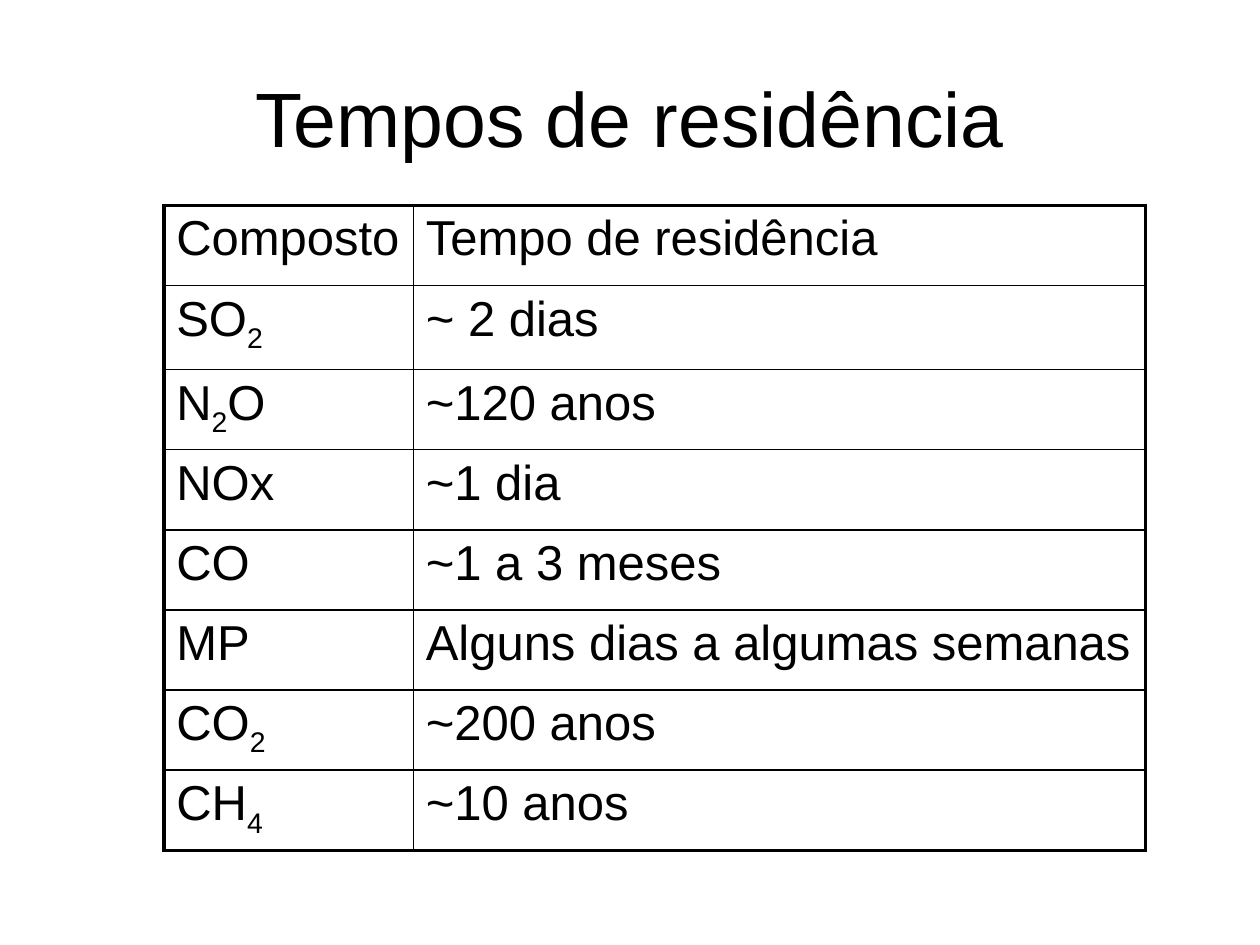
from lxml import etree
from pptx import Presentation
from pptx.dml.color import RGBColor
from pptx.enum.text import MSO_ANCHOR, PP_ALIGN
from pptx.oxml.ns import qn
from pptx.util import Inches, Pt

BLACK = RGBColor(0x00, 0x00, 0x00)
CENTER = PP_ALIGN.CENTER
MIDDLE = MSO_ANCHOR.MIDDLE
BLANK_LAYOUT = 6
THIN, THICK = 1, 2.25

# Text between underscores is set as a subscript.
RESIDENCE_TIMES = [
    ("Composto", "Tempo de residência"),
    ("SO_2", "~ 2 dias"),
    ("N_2_O", "~120 anos"),
    ("NOx", "~1 dia"),
    ("CO", "~1 a 3 meses"),
    ("MP", "Alguns dias a algumas semanas"),
    ("CO_2", "~200 anos"),
    ("CH_4", "~10 anos"),
]
COLUMN_WIDTHS = [1.98, 5.81]
TABLE_HEIGHT = 5.12
ROW_WEIGHTS = [1, 1.05, 1, 1, 1, 1, 1, 1]


class SlideBuilder:
    def __init__(self, page, font_name="Arial", color=BLACK):
        self.page = page
        self.font_name = font_name
        self.color = color

    def style(self, para, size):
        para.font.name = self.font_name
        para.font.size = Pt(size)
        para.font.color.rgb = self.color

    def title(self, text, left, top, width, height):
        box = self.page.shapes.add_textbox(*map(Inches, (left, top, width, height)))
        frame = box.text_frame
        frame.word_wrap = True
        frame.vertical_anchor = MIDDLE
        para = frame.paragraphs[0]
        para.text = text
        para.alignment = CENTER
        self.style(para, 44)

    def formula(self, para, text):
        """Add runs to para, lowering every second part of text split at underscores."""
        for index, part in enumerate(text.split("_")):
            span = para.add_run()
            span.text = part
            if index % 2:
                span.font._element.set("baseline", "-25000")

    def border(self, cell, side, width):
        properties = cell._tc.get_or_add_tcPr()
        line = etree.SubElement(properties, qn(f"a:ln{side}"), w=str(Pt(width)))
        fill = etree.SubElement(line, qn("a:solidFill"))
        etree.SubElement(fill, qn("a:srgbClr"), val=str(self.color))

    def table(self, rows, left, top, widths, height, weights):
        """Draw rows with a thick frame, sharing the height by weights."""
        last_row, last_column = len(rows) - 1, len(widths) - 1
        grid = self.page.shapes.add_table(
            len(rows), len(widths), Inches(left), Inches(top),
            Inches(sum(widths)), Inches(height)).table
        grid.first_row = grid.horz_banding = False
        for column, width in zip(grid.columns, widths):
            column.width = Inches(width)
        for row, weight in zip(grid.rows, weights):
            row.height = Inches(height * weight / sum(weights))
        for r, texts in enumerate(rows):
            for c, text in enumerate(texts):
                cell = grid.cell(r, c)
                on_frame = {"L": c == 0, "R": c == last_column,
                            "T": r == 0, "B": r == last_row}
                for side, outer in on_frame.items():
                    self.border(cell, side, THICK if outer else THIN)
                cell.fill.background()
                para = cell.text_frame.paragraphs[0]
                self.formula(para, text)
                self.style(para, 28)


def main():
    deck = Presentation()
    deck.slide_width, deck.slide_height = Inches(10), Inches(7.5)
    page = deck.slides.add_slide(deck.slide_layouts[BLANK_LAYOUT])
    builder = SlideBuilder(page)
    builder.title("Tempos de residência", 0.5, 0.3, 9, 1.25)
    builder.table(RESIDENCE_TIMES, 1.3, 1.63, COLUMN_WIDTHS, TABLE_HEIGHT, ROW_WEIGHTS)
    deck.save("out.pptx")


if __name__ == "__main__":
    main()
